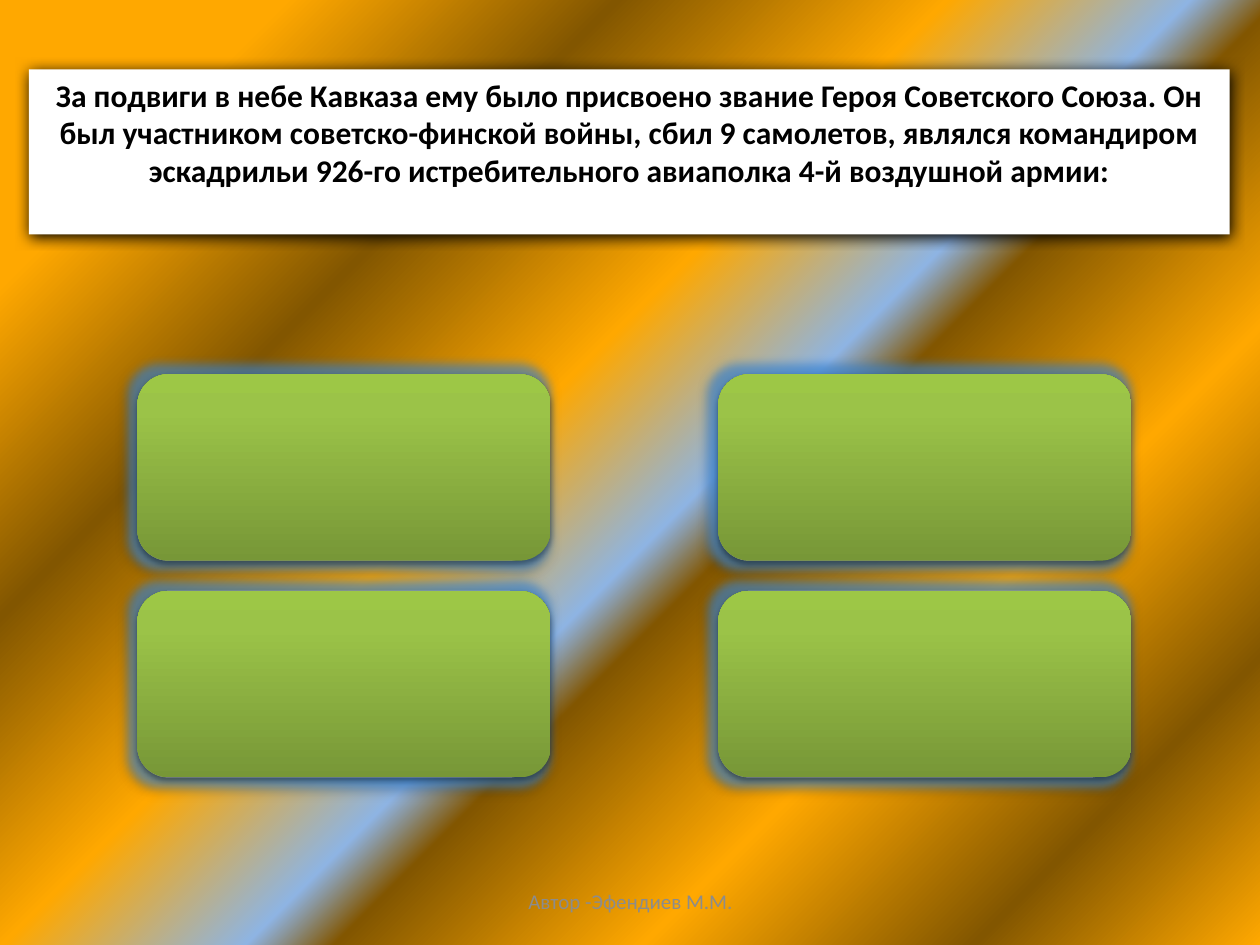
from lxml import etree
from pptx import Presentation
from pptx.dml.color import RGBColor
from pptx.enum.shapes import MSO_SHAPE
from pptx.enum.text import MSO_ANCHOR, MSO_AUTO_SIZE, PP_ALIGN
from pptx.oxml.ns import qn
from pptx.util import Inches, Pt

ROUNDED = MSO_SHAPE.ROUNDED_RECTANGLE
CENTER = PP_ALIGN.CENTER
TITLE_ONLY = 5
COLORS = {
    "white": "FFFFFF", "black": "000000", "gray": "8C8C8C",
    "orange": "FFA800", "brown": "825600", "sky": "8EB4E3", "glow": "3A8BE0",
    "green_dark": "779737", "green_mid": "9BC348", "green_light": "9DC746",
}


def set_gradient(owner, fill, stops, angle):
    """Fill with (percent, colour) stops along a clockwise angle."""
    fill.gradient()
    gradient = owner.element.find(".//" + qn("a:gradFill"))
    stop_list = gradient.find(qn("a:gsLst"))
    for old_stop in list(stop_list):
        stop_list.remove(old_stop)
    for percent, color in stops:
        stop = etree.SubElement(stop_list, qn("a:gs"), pos=str(percent * 1000))
        etree.SubElement(stop, qn("a:srgbClr"), val=COLORS[color])
    direction = gradient.find(qn("a:lin"))
    direction.set("ang", str(angle * 60000))
    direction.set("scaled", "0")


def add_effect(shape, kind, color, opacity, **settings):
    """Append a glow or a shadow to the shape's effect list."""
    effects = shape.element.spPr.find(qn("a:effectLst"))
    effect = etree.SubElement(effects, qn(kind), **settings)
    tint = etree.SubElement(effect, qn("a:srgbClr"), val=COLORS[color])
    etree.SubElement(tint, qn("a:alpha"), val=str(opacity * 1000))


deck = Presentation()
deck.slide_width, deck.slide_height = Inches(10), Inches(7.5)
page = deck.slides.add_slide(deck.slide_layouts[TITLE_ONLY])

# Striped diagonal background
set_gradient(page, page.background.fill, [
    (13, "orange"), (28, "brown"), (43, "orange"), (54, "sky"),
    (58, "brown"), (72, "orange"), (87, "brown"), (100, "orange"),
], 45)

# Question
question = page.shapes.title
question.left, question.top = Inches(0.23), Inches(0.55)
question.width, question.height = Inches(9.53), Inches(1.31)
question.fill.solid()
question.fill.fore_color.rgb = RGBColor.from_string(COLORS["white"])
question.shadow.inherit = False
add_effect(question, "a:outerShdw", "black", 100, blurRad=str(Pt(8.5)),
           dist=str(Pt(1)), dir="5400000", rotWithShape="0")
question.text_frame.text = (
    "За подвиги в небе Кавказа ему было присвоено звание Героя Советского Союза. Он "
    "был участником советско-финской войны, сбил 9 самолетов, являлся командиром "
    "эскадрильи 926-го истребительного авиаполка 4-й воздушной армии:")
question.text_frame.vertical_anchor = MSO_ANCHOR.TOP

# Answer cards: glowing white backs first, green covers on top
card_places = [(left, top) for top in (2.97, 4.69) for left in (1.09, 5.7)]
for layer, width, opacity, blur, distance in (
        ("back", 3.2, 32, 3.5, 2.2), ("cover", 3.28, 35, 3.1, 1.8)):
    for left, top in card_places:
        card = page.shapes.add_shape(
            ROUNDED, Inches(left), Inches(top), Inches(width), Inches(1.48))
        card.line.fill.background()
        card.shadow.inherit = False
        if layer == "back":
            card.fill.solid()
            card.fill.fore_color.rgb = RGBColor.from_string(COLORS["white"])
            add_effect(card, "a:glow", "glow", 60, rad=str(Pt(11)))
        else:
            set_gradient(card, card.fill, [
                (0, "green_dark"), (80, "green_mid"), (100, "green_light")], 270)
        add_effect(card, "a:outerShdw", "black", opacity, blurRad=str(Pt(blur)),
                   dist=str(Pt(distance)), dir="5400000", rotWithShape="0")

# Author line
author = page.shapes.add_textbox(Inches(3.42), Inches(6.95), Inches(3.17), Inches(0.4))
author.text_frame.text = "Автор -Эфендиев М.М."
author.text_frame.vertical_anchor = MSO_ANCHOR.MIDDLE

# Text formatting
for box, size, color, bold in (
        (question, 18, "black", True), (author, 12, "gray", False)):
    box.text_frame.word_wrap = True
    box.text_frame.auto_size = MSO_AUTO_SIZE.NONE
    para = box.text_frame.paragraphs[0]
    para.alignment = CENTER
    font = para.runs[0].font
    font.name, font.size, font.bold = "Calibri", Pt(size), bold
    font.color.rgb = RGBColor.from_string(COLORS[color])

deck.save("out.pptx")
